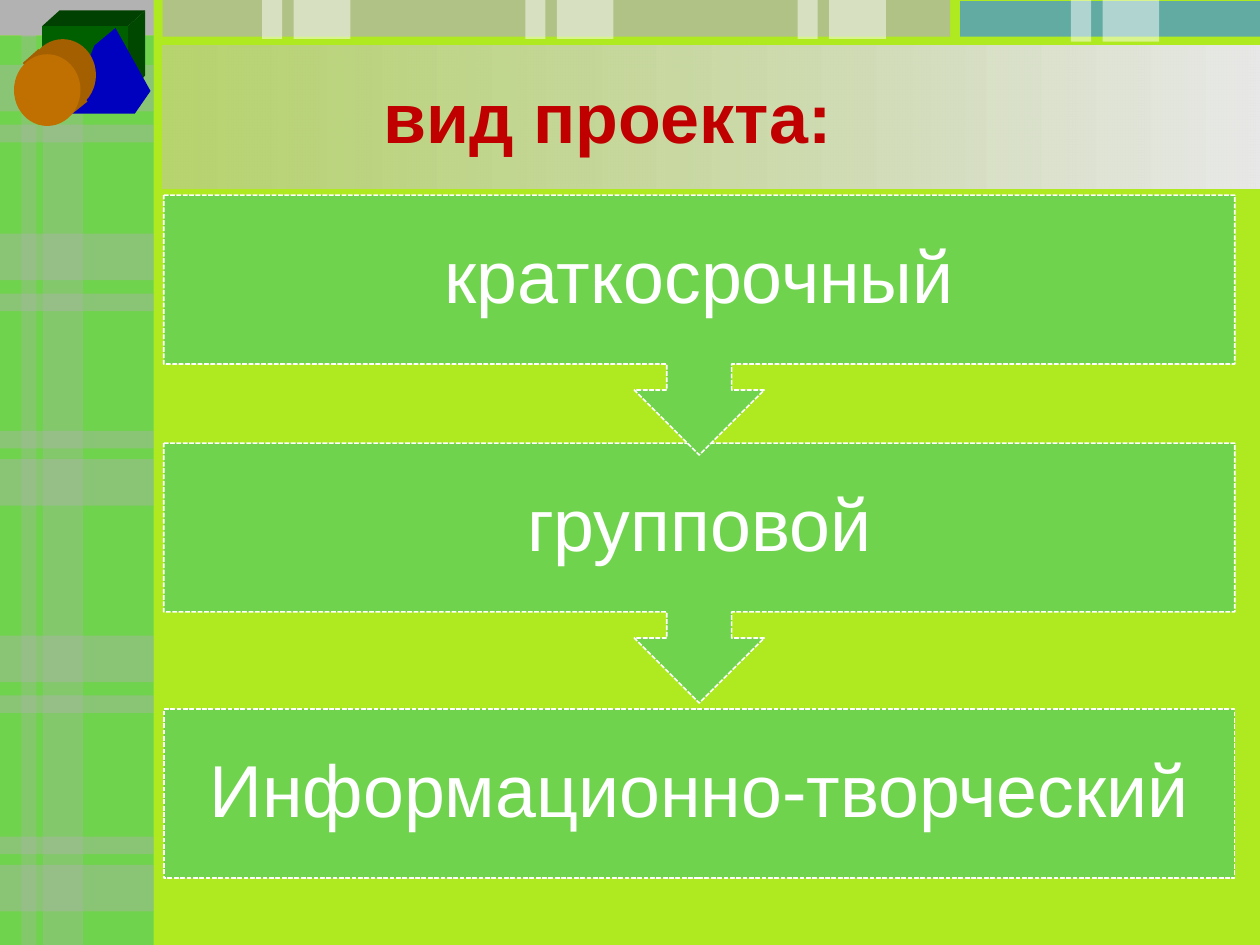
from dataclasses import dataclass

from lxml import etree
from pptx import Presentation
from pptx.dml.color import RGBColor
from pptx.enum.dml import MSO_LINE
from pptx.enum.shapes import MSO_SHAPE
from pptx.enum.text import MSO_ANCHOR, PP_ALIGN
from pptx.oxml.ns import qn
from pptx.util import Pt

RECT, OVAL = MSO_SHAPE.RECTANGLE, MSO_SHAPE.OVAL
CALLOUT = MSO_SHAPE.DOWN_ARROW_CALLOUT
DASH = MSO_LINE.SQUARE_DOT
MIDDLE = MSO_ANCHOR.MIDDLE
LEFT, CENTER = PP_ALIGN.LEFT, PP_ALIGN.CENTER

FONT = "Arial"
COLORS = {
    "lime": "AFE91F", "green": "70D34D", "gray": "B2B2B2", "blue": "4192DB",
    "white": "FFFFFF", "title": "C00000", "panel_from": "C0C0C0", "panel_to": "E8E8E8",
    "cube_front": "006000", "cube_top": "004000", "cube_side": "004800",
    "prism": "0000BF", "cylinder_side": "A35F00", "cylinder_front": "C07000",
}
SIDEBAR_WIDTH = 87.84


@dataclass(frozen=True)
class Block:
    left: float
    top: float
    width: float
    height: float
    color: str
    opacity: int = 100


@dataclass(frozen=True)
class Face:
    points: tuple
    color: str


@dataclass(frozen=True)
class Step:
    text: str
    top: float
    height: float
    preset: MSO_SHAPE


def rgb(name: str) -> RGBColor:
    return RGBColor.from_string(COLORS[name])


def add_alpha(color_element, percent: int) -> None:
    etree.SubElement(color_element, qn("a:alpha"), val=str(percent * 1000))


def paint(shape, color: str, opacity: int = 100) -> None:
    shape.shadow.inherit = False
    shape.line.fill.background()
    shape.fill.solid()
    shape.fill.fore_color.rgb = rgb(color)
    if opacity < 100:
        add_alpha(shape._element.spPr.find(".//" + qn("a:srgbClr")), opacity)


def draw_block(shapes, block: Block, preset=RECT):
    shape = shapes.add_shape(preset, Pt(block.left), Pt(block.top),
                             Pt(block.width), Pt(block.height))
    paint(shape, block.color, block.opacity)
    return shape


def draw_face(shapes, face: Face) -> None:
    builder = shapes.build_freeform(*face.points[0], scale=Pt(1))
    builder.add_line_segments(face.points[1:], close=True)
    paint(builder.convert_to_shape(), face.color)


def format_text(frame, size: float, color: str, align, bold: bool = False) -> None:
    frame.word_wrap = True
    frame.vertical_anchor = MIDDLE
    paragraph = frame.paragraphs[0]
    paragraph.alignment = align
    font = paragraph.runs[0].font
    font.name, font.size, font.bold = FONT, Pt(size), bold
    font.color.rgb = rgb(color)


def draw_step(shapes, step: Step) -> None:
    shape = draw_block(shapes, Block(93.6, step.top, 612, step.height, "green"), step.preset)
    shape.line.color.rgb = rgb("white")
    shape.line.width = Pt(0.9)
    shape.line.dash_style = DASH
    frame = shape.text_frame
    frame.text = step.text
    frame.margin_left = frame.margin_right = Pt(24)
    frame.margin_top = frame.margin_bottom = Pt(24)
    format_text(frame, 42, "white", CENTER)
    frame.paragraphs[0].line_spacing = 0.9


def draw_sidebar(shapes) -> None:
    draw_block(shapes, Block(0, 20.2, SIDEBAR_WIDTH, 519.8, "green"))
    draw_block(shapes, Block(0, 0, SIDEBAR_WIDTH, 20.2, "gray"))
    for left, width in ((12.2, 8.6), (24.5, 23)):
        draw_block(shapes, Block(left, 0, width, 540, "gray", 30))
        draw_block(shapes, Block(left, 0, width, 20.9, "gray", 50))
    below, above = 34.2, -16.2
    for top, offset in ((37.1, below), (133.6, below), (262.4, above),
                        (363.2, below), (494.3, above)):
        draw_block(shapes, Block(0, top, SIDEBAR_WIDTH, 26.6, "gray", 40))
        draw_block(shapes, Block(0, top + offset, SIDEBAR_WIDTH, 10.1, "gray", 40))


def draw_header(shapes) -> None:
    draw_block(shapes, Block(92.9, 0, 450, 20.9, "gray", 70))
    panel = draw_block(shapes, Block(92.9, 25.9, 627.1, 82.1, "panel_from"))
    panel.fill.gradient()
    panel.fill.gradient_angle = 0
    for stop, color in zip(panel.fill.gradient_stops, ("panel_from", "panel_to")):
        stop.color.rgb = rgb(color)
    add_alpha(panel._element.spPr.find(".//" + qn("a:srgbClr")), 50)
    draw_block(shapes, Block(548.6, 0.7, 171.4, 20.2, "blue", 70))
    for left, height in ((149.8, 22.3), (300.2, 22.3), (455.8, 22.3), (612, 23.8)):
        draw_block(shapes, Block(left, 0, 11.5, height, "white", 50))
        draw_block(shapes, Block(left + 18, 0, 32.4, height, "white", 50))


def draw_toys(shapes) -> None:
    for face in (
        Face(((24, 15), (34, 5.7), (83, 5.7), (73, 15)), "cube_top"),
        Face(((73, 15), (83, 5.7), (83, 43), (73, 55)), "cube_side"),
        Face(((24, 15), (73, 15), (73, 55), (24, 55)), "cube_front"),
        Face(((66, 15.5), (85.7, 52.5), (77, 65), (38, 65), (54, 26)), "prism"),
    ):
        draw_face(shapes, face)
    draw_block(shapes, Block(16.8, 22.4, 38, 41, "cylinder_side"), OVAL)
    draw_face(shapes, Face(((13, 36.5), (22, 28), (50, 57.5), (40.5, 66.5)), "cylinder_side"))
    draw_block(shapes, Block(8, 31, 38, 41, "cylinder_front"), OVAL)


def place_title(title) -> None:
    title.left, title.top, title.width, title.height = Pt(100.8), Pt(36), Pt(511.2), Pt(59.8)
    frame = title.text_frame
    frame.text = "вид проекта:"
    frame.margin_left = Pt(118.4)
    format_text(frame, 40, "title", LEFT, bold=True)


def main() -> None:
    deck = Presentation()
    deck.slide_width, deck.slide_height = Pt(720), Pt(540)
    slide = deck.slides.add_slide(deck.slide_layouts[5])
    slide.background.fill.solid()
    slide.background.fill.fore_color.rgb = rgb("lime")
    shapes = slide.shapes
    draw_sidebar(shapes)
    draw_header(shapes)
    draw_toys(shapes)
    for step in (
        Step("Информационно-творческий", 405.3, 96.6, RECT),
        Step("групповой", 253.2, 148.5, CALLOUT),
        Step("краткосрочный", 111.5, 148.5, CALLOUT),
    ):
        draw_step(shapes, step)
    title = shapes.title
    place_title(title)
    shapes._spTree.append(title._element)
    deck.save("out.pptx")


if __name__ == "__main__":
    main()
